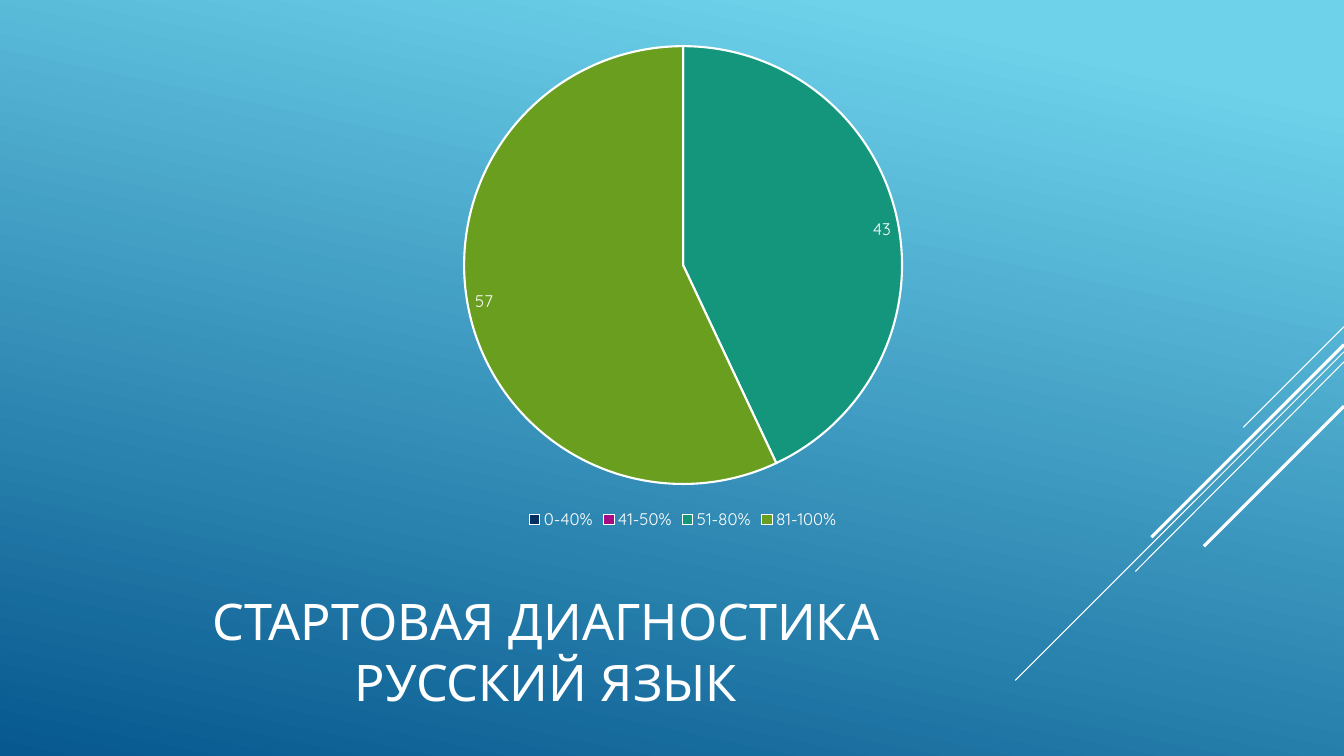
from lxml import etree
from pptx import Presentation
from pptx.chart.data import CategoryChartData
from pptx.dml.color import RGBColor
from pptx.enum import chart as ch, shapes, text
from pptx.oxml.ns import qn
from pptx.util import Inches, Pt

TITLE = "СТАРТОВАЯ ДИАГНОСТИКА\vРУССКИЙ ЯЗЫК"
FONT = "Quicksand"
COLORS = {"white": "FFFFFF", "sky": "6ED2EB", "deep": "06588E",
          "navy": "052F61", "purple": "A50E82", "teal": "14967C", "green": "6A9E1F"}
# (score range, share of pupils, slice colour)
RESULTS = [("0-40%", 0, "navy"), ("41-50%", 0, "purple"),
           ("51-80%", 43, "teal"), ("81-100%", 57, "green")]
# (y at the right edge, horizontal run, vertical run, line width)
RAYS = [(3.24, 1.0, 1.0, 0.75), (3.49, 3.26, 3.26, 0.75), (3.59, 2.07, 2.08, 0.75),
        (3.42, 1.91, 1.91, 2.25), (4.03, 1.39, 1.39, 2.25)]
SLIDE_WIDTH, SLIDE_HEIGHT = 13.33, 7.5


def rgb(name):
    return RGBColor.from_string(COLORS[name])


def style_font(font, size):
    font.name = FONT
    font.size = Pt(size)
    font.color.rgb = rgb("white")


def paint_background(slide):
    fill = slide.background.fill
    fill.gradient()
    fill.gradient_angle = 258
    for stop, position, name in zip(fill.gradient_stops, (0.1, 1), ("sky", "deep")):
        stop.position = position
        stop.color.rgb = rgb(name)


def add_rays(slide):
    """Draw the diagonal lines that run down and left from the right edge."""
    for top, run, drop, width in RAYS:
        ray = slide.shapes.add_connector(
            shapes.MSO_CONNECTOR.STRAIGHT, Inches(SLIDE_WIDTH), Inches(top),
            Inches(SLIDE_WIDTH - run), Inches(top + drop))
        ray.line.color.rgb = rgb("white")
        ray.line.width = Pt(width)
        etree.SubElement(ray._element.spPr, qn("a:effectLst"))


def add_title(slide):
    box = slide.shapes.add_textbox(Inches(0.75), Inches(5.65), Inches(9.33), Inches(1.61))
    frame = box.text_frame
    frame.word_wrap = True
    frame.vertical_anchor = text.MSO_ANCHOR.MIDDLE
    frame.text = TITLE
    paragraph = frame.paragraphs[0]
    paragraph.alignment = text.PP_ALIGN.CENTER
    for run in paragraph.runs:
        style_font(run.font, 36)


def add_results_pie(slide):
    data = CategoryChartData()
    data.categories = [label for label, _, _ in RESULTS]
    data.add_series("Series 1", [share for _, share, _ in RESULTS])
    chart = slide.shapes.add_chart(
        ch.XL_CHART_TYPE.PIE, Inches(0.75), Inches(0.32),
        Inches(12.05), Inches(4.98), data).chart
    chart.has_title = False
    style_font(chart.font, 10)

    chart.has_legend = True
    chart.legend.position = ch.XL_LEGEND_POSITION.BOTTOM
    chart.legend.include_in_layout = False
    style_font(chart.legend.font, 12)

    plot = chart.plots[0]
    plot.vary_by_categories = True
    series = plot.series[0]
    for index, (_, _, color) in enumerate(RESULTS):
        point = series.points[index].format
        point.fill.solid()
        point.fill.fore_color.rgb = rgb(color)
        point.line.color.rgb = rgb("white")
        point.line.width = Pt(1.5)

    labels = series.data_labels
    labels.show_value = True
    labels.position = ch.XL_LABEL_POSITION.INSIDE_END
    labels.number_format = "0;;;"  # zero shares get no label
    labels.number_format_is_linked = False
    style_font(labels.font, 12)


def main():
    presentation = Presentation()
    presentation.slide_width = Inches(SLIDE_WIDTH)
    presentation.slide_height = Inches(SLIDE_HEIGHT)
    slide = presentation.slides.add_slide(presentation.slide_layouts[6])
    paint_background(slide)
    add_rays(slide)
    add_title(slide)
    add_results_pie(slide)
    presentation.save("out.pptx")


if __name__ == "__main__":
    main()
